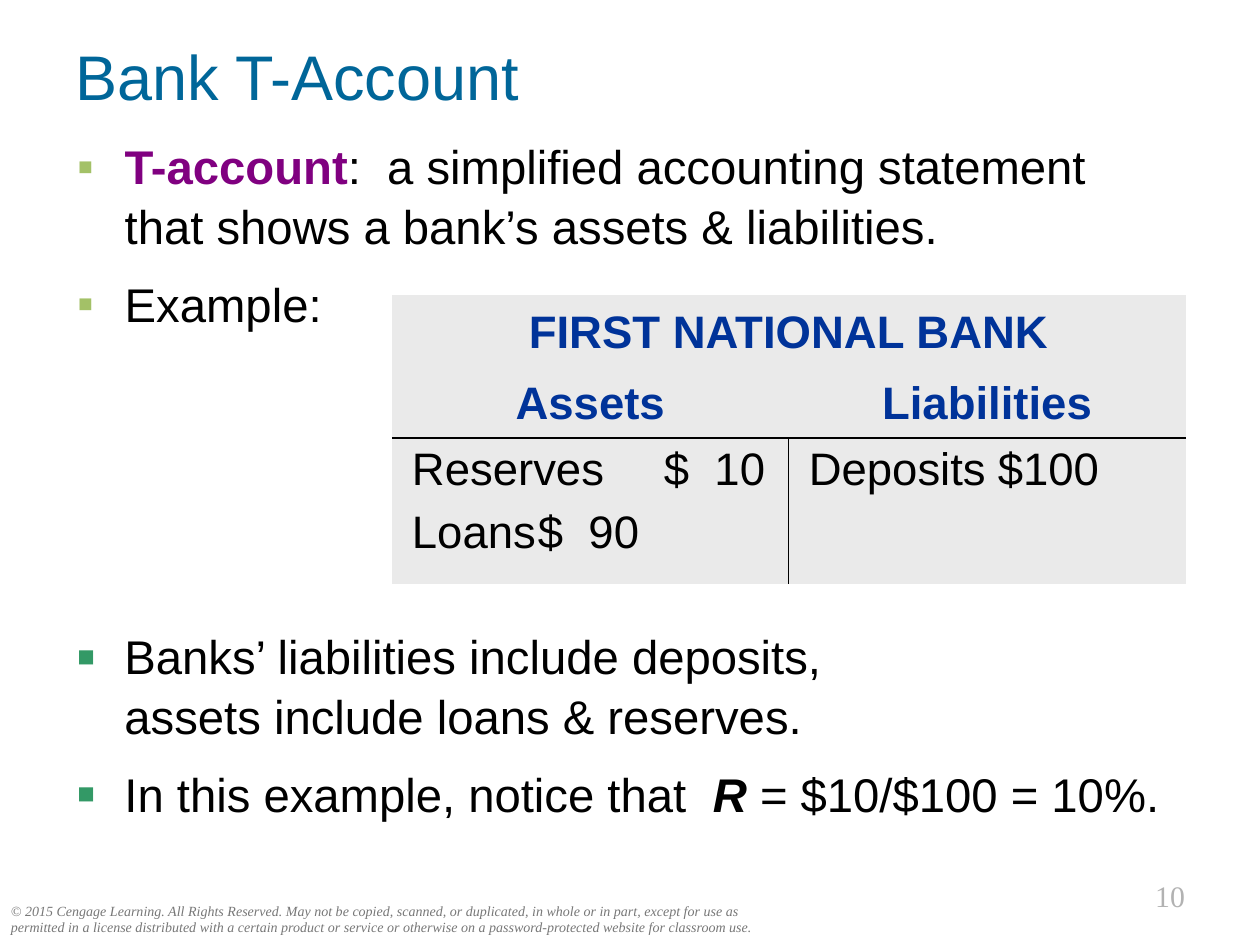
from lxml.etree import SubElement
from pptx import Presentation
from pptx.dml.color import RGBColor
from pptx.enum.text import MSO_ANCHOR as Anchor, MSO_AUTO_SIZE as AutoSize, PP_ALIGN as Align
from pptx.oxml.ns import qn
from pptx.util import Cm, Pt

BLACK, NAVY, TEAL, PURPLE = "000000", "003399", "006699", "800080"
PALE_GREEN, GREEN, PANEL = "A3C167", "339966", "EAEAEA"
GREY, LIGHT_GREY = "777777", "B2B2B2"


def color(hex_text):
    return RGBColor.from_string(hex_text)


def add_xml(parent, tag, **attributes):
    return SubElement(parent, qn(tag), {name: str(value) for name, value in attributes.items()})


class SlideBuilder:
    font_name = "Arial"
    list_size = 27
    table_size = 26
    indent = Cm(0.96)

    def __init__(self, slide):
        self.slide = slide

    def run(self, paragraph, text, size, fill=BLACK, bold=False, italic=False, name=None):
        run = paragraph.add_run()
        run.text = text
        font = run.font
        font.name, font.size = name or self.font_name, Pt(size)
        font.bold, font.italic = bold, italic
        font.color.rgb = color(fill)

    def place(self, shape, box):
        shape.left, shape.top, shape.width, shape.height = [Cm(value) for value in box]
        frame = shape.text_frame
        frame.word_wrap = True
        frame.auto_size = AutoSize.NONE
        return frame

    def title(self, text, box):
        frame = self.place(self.slide.shapes.title, box)
        frame.vertical_anchor = Anchor.MIDDLE
        paragraph = frame.paragraphs[0]
        paragraph.alignment = Align.LEFT
        self.run(paragraph, text, 36, TEAL)

    def text(self, text, box, size, fill, align=Align.LEFT, italic=False):
        frame = self.place(self.slide.shapes.add_textbox(0, 0, 0, 0), box)
        paragraph = frame.paragraphs[0]
        paragraph.alignment = align
        self.run(paragraph, text, size, fill, italic=italic, name="Times New Roman")

    def bullets(self, shape, box, items, bullet_color, bullet_percent=100):
        """Each item is a list of lines; each line is a list of (text, style) runs."""
        frame = self.place(shape, box)
        frame.vertical_anchor = Anchor.TOP
        for index, lines in enumerate(items):
            paragraph = frame.add_paragraph() if index else frame.paragraphs[0]
            properties = paragraph._p.get_or_add_pPr()
            properties.set("marL", str(self.indent))
            properties.set("indent", str(-self.indent))
            add_xml(add_xml(properties, "a:buClr"), "a:srgbClr", val=bullet_color)
            add_xml(properties, "a:buSzPct", val=bullet_percent * 1000)
            add_xml(properties, "a:buFont", typeface=self.font_name)
            add_xml(properties, "a:buChar", char="▪")
            paragraph.line_spacing = 1.05
            paragraph.space_before = Pt(10.5 if index else 0)
            for number, runs in enumerate(lines):
                if number:
                    paragraph.add_line_break()
                for text, style in runs:
                    self.run(paragraph, text, self.list_size, **style)

    def table(self, box, row_heights, columns):
        left, top, width, height = [Cm(value) for value in box]
        table = self.slide.shapes.add_table(len(row_heights), columns, left, top, width, height).table
        for row, row_height in zip(table.rows, row_heights):
            row.height = Cm(row_height)
        return table

    def cell(self, cell, borders=""):
        """Fill a cell and draw only the sides named in borders (L, R, T, B)."""
        properties = cell._tc.get_or_add_tcPr()
        for side in "LRTB":
            line = add_xml(properties, f"a:ln{side}", w=Pt(1))
            if side in borders:
                add_xml(add_xml(line, "a:solidFill"), "a:srgbClr", val=BLACK)
            else:
                add_xml(line, "a:noFill")
        cell.fill.solid()
        cell.fill.fore_color.rgb = color(PANEL)

    def heading_cell(self, cell, text):
        cell.vertical_anchor = Anchor.MIDDLE
        paragraph = cell.text_frame.paragraphs[0]
        paragraph.alignment = Align.CENTER
        self.run(paragraph, text, self.table_size, NAVY, bold=True)

    def entry_cell(self, cell, entries, tab):
        for index, (label, amount) in enumerate(entries):
            frame = cell.text_frame
            paragraph = frame.add_paragraph() if index else frame.paragraphs[0]
            properties = paragraph._p.get_or_add_pPr()
            properties.set("marL", str(Cm(0.15)))
            properties.set("indent", "0")
            add_xml(add_xml(properties, "a:tabLst"), "a:tab", pos=Cm(tab), algn="l")
            paragraph.space_before = Pt(7 if index else 0)
            self.run(paragraph, f"{label}\t{amount}", self.table_size)


def main():
    presentation = Presentation()
    presentation.slide_width, presentation.slide_height = Cm(25.4), Cm(19.05)
    slide = presentation.slides.add_slide(presentation.slide_layouts[1])
    builder = SlideBuilder(slide)

    # Footer
    builder.text(
        "© 2015 Cengage Learning. All Rights Reserved. May not be copied, scanned, or duplicated, "
        "in whole or in part, except for use as permitted in a license distributed with a certain "
        "product or service or otherwise on a password-protected website for classroom use.",
        (-0.03, 18.06, 15.7, 0.94), 8, GREY, italic=True)
    builder.text("10", (20.96, 17.58, 3.18, 0.99), 17, LIGHT_GREY, Align.RIGHT)

    # Title and definition
    builder.title("Bank T-Account", (1.27, 0.61, 22.86, 1.8))
    builder.bullets(slide.placeholders[1], (1.3, 2.59, 22.86, 4.52), [
        [[("T-account", {"fill": PURPLE, "bold": True}), (":  a simplified accounting statement ", {})],
         [("that shows a bank’s assets & liabilities.", {})]],
        [[("Example:", {})]],
    ], PALE_GREEN)

    # T-account
    table = builder.table((7.9, 5.94, 16, 5.84), (1.52, 1.37, 2.95), 2)
    borders = (("", ""), ("B", "B"), ("TR", "TL"))
    for row, sides in enumerate(borders):
        for column, side in enumerate(sides):
            builder.cell(table.cell(row, column), side)
    table.cell(0, 0).merge(table.cell(0, 1))
    builder.heading_cell(table.cell(0, 0), "FIRST NATIONAL BANK")
    accounts = (
        ("Assets", [("Reserves", "$  10"), ("Loans", "$  90")], 5.23),
        ("Liabilities", [("Deposits", "$100")], 5.41),
    )
    for column, (heading, entries, tab) in enumerate(accounts):
        builder.heading_cell(table.cell(1, column), heading)
        builder.entry_cell(table.cell(2, column), entries, tab)

    # Conclusions
    builder.bullets(slide.shapes.add_textbox(0, 0, 0, 0), (1.3, 12.47, 22.76, 5.03), [
        [[("Banks’ liabilities include deposits, ", {})],
         [("assets include loans & reserves.", {})]],
        [[("In this example, notice that  ", {}), ("R", {"bold": True, "italic": True}),
          (" = $10/$100 = 10%.", {})]],
    ], GREEN, 120)

    presentation.save("out.pptx")


if __name__ == "__main__":
    main()
